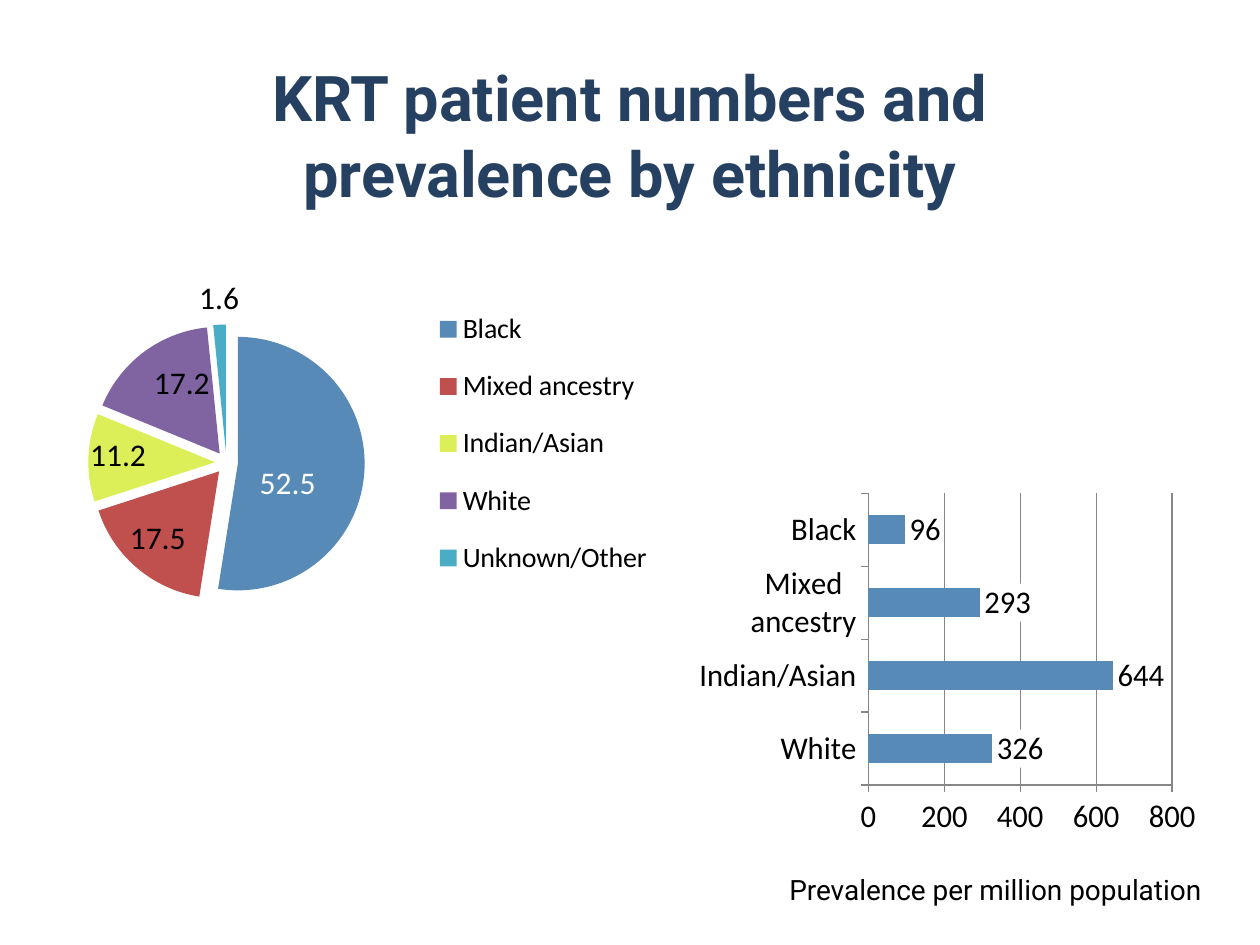
import dataclasses
from typing import Any, Optional

import pptx
import pptx.chart.data
import pptx.dml.color
import pptx.enum.chart
import pptx.enum.text
import pptx.oxml
import pptx.oxml.ns
import pptx.util

Cm = pptx.util.Cm
Pt = pptx.util.Pt
ChartType = pptx.enum.chart.XL_CHART_TYPE
LabelPosition = pptx.enum.chart.XL_LABEL_POSITION
NAMESPACES = " ".join(pptx.oxml.ns.nsdecls(prefix) for prefix in ("c", "a"))
BLUE = "578AB7"
GREY = "868686"


@dataclasses.dataclass
class Box:
    """Position and size in centimetres."""
    left: float
    top: float
    width: float
    height: float

    def lengths(self) -> list:
        return [Cm(value) for value in dataclasses.astuple(self)]


@dataclasses.dataclass
class Slice:
    name: str
    percent: float
    color: str
    position: Any
    label_color: str = "000000"
    shift: Optional[tuple] = None  # label offset as fractions of the chart


SLICES = [
    Slice("Black", 52.5, BLUE, LabelPosition.CENTER, "FFFFFF", (-0.02, 0.03)),
    Slice("Mixed ancestry", 17.5, "C0504D", LabelPosition.CENTER, shift=(-0.03, 0.04)),
    Slice("Indian/Asian", 11.2, "DCEF59", LabelPosition.CENTER, shift=(-0.05, -0.01)),
    Slice("White", 17.2, "8064A2", LabelPosition.CENTER, shift=(0, -0.04)),
    Slice("Unknown/Other", 1.6, "4BACC6", LabelPosition.OUTSIDE_END),
]
PREVALENCE = {"White": 326, "Indian/Asian": 644, "Mixed ancestry": 293, "Black": 96}


def rgb(color: str) -> pptx.dml.color.RGBColor:
    return pptx.dml.color.RGBColor.from_string(color)


def apply(target: Any, formats: dict) -> None:
    for name, value in formats.items():
        setattr(target, name, value)


def format_font(font: Any, name: str, size: int, color: str = "000000", bold: bool = False) -> None:
    apply(font, {"name": name, "size": Pt(size), "bold": bold})
    font.color.rgb = rgb(color)


def fill(item: Any, color: str) -> None:
    item.format.fill.solid()
    item.format.fill.fore_color.rgb = rgb(color)


def layout_xml(values: dict) -> Any:
    parts = "".join(f'<c:{tag} val="{value}"/>' for tag, value in values.items())
    return pptx.oxml.parse_xml(
        f"<c:layout {NAMESPACES}><c:manualLayout>{parts}</c:manualLayout></c:layout>")


def place(parent: Any, left: float, top: float, width: float, height: float, inner: bool) -> None:
    """Place a plot area or legend by fractions of its chart."""
    for old in parent.findall(pptx.oxml.ns.qn("c:layout")):
        parent.remove(old)
    target = {"layoutTarget": "inner"} if inner else {}
    layout = layout_xml({**target, "xMode": "edge", "yMode": "edge",
                         "x": left, "y": top, "w": width, "h": height})
    parent.insert(0 if inner else 1, layout)


def add_chart(slide: Any, kind: Any, box: Box, values: dict, number_format: str) -> Any:
    data = pptx.chart.data.CategoryChartData(number_format=number_format)
    data.categories = list(values)
    data.add_series("Series 1", list(values.values()))
    chart = slide.shapes.add_chart(kind, *box.lengths(), data).chart
    apply(chart, {"has_title": False, "has_legend": False})
    format_font(chart.font, "Calibri", 18)
    plot = chart.plots[0]
    apply(plot, {"has_data_labels": True, "vary_by_categories": kind == ChartType.PIE})
    apply(plot.data_labels, {"show_value": True, "number_format": number_format,
                             "number_format_is_linked": False})
    format_font(plot.data_labels.font, "Calibri", 18)
    return chart


def add_prevalence_chart(slide: Any) -> None:
    chart = add_chart(slide, ChartType.BAR_CLUSTERED, Box(14.1, 9.93, 10, 7.19), PREVALENCE, "0")
    place(chart._chartSpace.xpath("c:chart/c:plotArea")[0], 0.33, 0, 0.63, 0.82, True)
    plot = chart.plots[0]
    plot.gap_width = 150
    fill(plot.series[0], BLUE)
    plot.data_labels.position = LabelPosition.OUTSIDE_END
    # White label backgrounds keep the gridlines off the numbers
    background = pptx.oxml.parse_xml(
        f'<c:spPr {NAMESPACES}><a:solidFill><a:srgbClr val="FFFFFF"/></a:solidFill></c:spPr>')
    plot._element.xpath("c:dLbls/c:numFmt")[0].addnext(background)

    value_axis = chart.value_axis
    apply(value_axis, {"minimum_scale": 0, "maximum_scale": 800, "major_unit": 200,
                       "has_major_gridlines": True})
    apply(value_axis.tick_labels, {"number_format": "0", "number_format_is_linked": False})
    for axis in (chart.category_axis, value_axis):
        axis.major_tick_mark = pptx.enum.chart.XL_TICK_MARK.OUTSIDE
        format_font(axis.tick_labels.font, "Calibri", 18)
    for item in (chart.category_axis, value_axis, value_axis.major_gridlines):
        item.format.line.color.rgb = rgb(GREY)
        item.format.line.width = Pt(0.75)


def add_patient_chart(slide: Any) -> None:
    values = {part.name: part.percent for part in SLICES}
    chart = add_chart(slide, ChartType.PIE, Box(0.15, 4.29, 13.59, 9.6), values, "0.0")
    place(chart._chartSpace.xpath("c:chart/c:plotArea")[0], 0.12, 0.23, 0.41, 0.59, True)
    chart.has_legend = True
    apply(chart.legend, {"position": pptx.enum.chart.XL_LEGEND_POSITION.RIGHT,
                         "include_in_layout": False})
    format_font(chart.legend.font, "Calibri", 16)
    place(chart.legend._element, 0.62, 0.16, 0.35, 0.65, False)

    series = chart.plots[0].series[0]
    for index, part in enumerate(SLICES):
        point = series.points[index]
        fill(point, part.color)
        point.data_label.position = part.position
        format_font(point.data_label.font, "Calibri", 18, part.label_color)
        if part.shift:
            label_index = series._element.xpath(f"c:dLbls/c:dLbl/c:idx[@val='{index}']")[0]
            label_index.addnext(layout_xml(dict(zip("xy", part.shift))))
    # Pull every slice away from the centre
    explosion = pptx.oxml.parse_xml(f'<c:explosion {NAMESPACES} val="9"/>')
    series._element.xpath("c:dPt")[0].addprevious(explosion)


def write(shape: Any, box: Box, text: str, alignment: Any, **font: Any) -> None:
    apply(shape, dict(zip(("left", "top", "width", "height"), box.lengths())))
    frame = shape.text_frame
    apply(frame, {"word_wrap": True, "vertical_anchor": pptx.enum.text.MSO_ANCHOR.MIDDLE})
    paragraph = frame.paragraphs[0]
    paragraph.alignment = alignment
    run = paragraph.add_run()
    run.text = text
    format_font(run.font, "Roboto", **font)


def main() -> None:
    presentation = pptx.Presentation()
    apply(presentation, {"slide_width": Cm(25.4), "slide_height": Cm(19.05)})
    slide = presentation.slides.add_slide(presentation.slide_layouts[5])
    align = pptx.enum.text.PP_ALIGN

    # Title
    write(slide.shapes.title, Box(2.1, 1.12, 21.2, 3.18),
          "KRT patient numbers and prevalence by ethnicity", align.CENTER,
          size=36, color="254061", bold=True)

    # Charts and the bar chart's caption
    add_prevalence_chart(slide)
    caption_box = Box(15.5, 17.45, 8.97, 0.94)
    caption = slide.shapes.add_textbox(*caption_box.lengths())
    write(caption, caption_box, "Prevalence per million population", align.RIGHT, size=16)
    add_patient_chart(slide)

    presentation.save("out.pptx")


if __name__ == "__main__":
    main()
